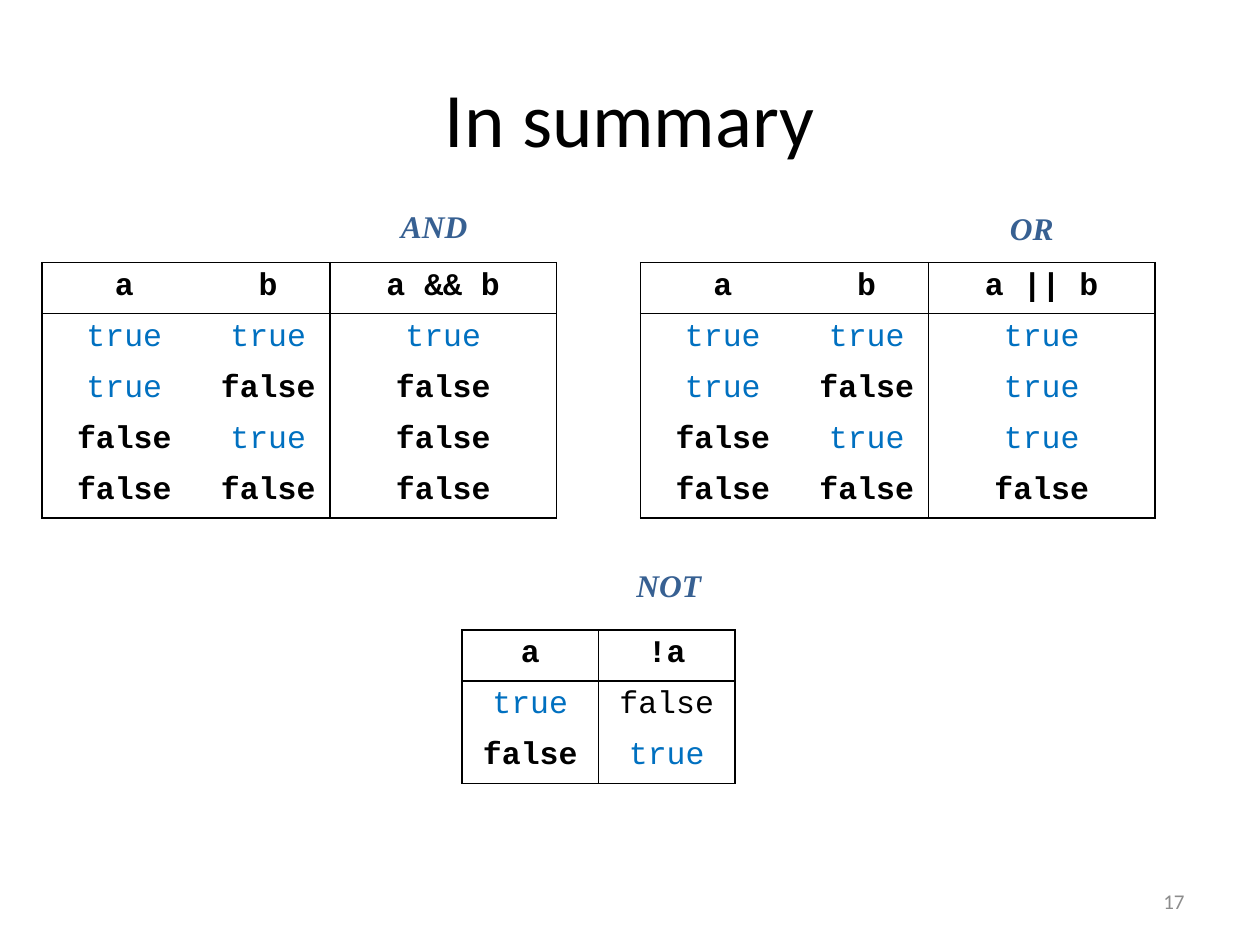
from lxml import etree
from pptx import Presentation
from pptx.dml.color import RGBColor
from pptx.enum import text
from pptx.oxml import ns
from pptx.util import Pt

BLACK = RGBColor(0x00, 0x00, 0x00)
GREY = RGBColor(0x8C, 0x8C, 0x8C)
TRUE_BLUE = RGBColor(0x00, 0x70, 0xC0)
CAPTION_BLUE = RGBColor(0x37, 0x60, 0x92)
ROW_HEIGHT = 29.2
LEFT, CENTER, RIGHT = text.PP_ALIGN.LEFT, text.PP_ALIGN.CENTER, text.PP_ALIGN.RIGHT
TOP, MIDDLE = text.MSO_ANCHOR.TOP, text.MSO_ANCHOR.MIDDLE

deck = Presentation()
deck.slide_width, deck.slide_height = Pt(720), Pt(540)
slide = deck.slides.add_slide(deck.slide_layouts[6])


def add_label(words, box, font_name, size, color, align, anchor, emphasis=False):
    frame = slide.shapes.add_textbox(*map(Pt, box)).text_frame
    frame.word_wrap = True
    frame.vertical_anchor = anchor
    frame.text = words
    line = frame.paragraphs[0]
    line.alignment = align
    font = line.runs[0].font
    font.name, font.size, font.color.rgb = font_name, Pt(size), color
    font.bold = font.italic = emphasis


def set_borders(cell, drawn):
    """Draw 1 pt black lines on the sides in drawn and clear the others."""
    properties = cell._tc.get_or_add_tcPr()
    for position, side in enumerate("LRTB"):
        line = etree.Element(ns.qn(f"a:ln{side}"), w=str(Pt(1)))
        if side in drawn:
            fill = etree.SubElement(line, ns.qn("a:solidFill"))
            etree.SubElement(fill, ns.qn("a:srgbClr"), val=str(BLACK))
        else:
            etree.SubElement(line, ns.qn("a:noFill"))
        properties.insert(position, line)


# Title and slide number
add_label("In summary", (36, 21.6, 648, 90), "Calibri", 44, BLACK, CENTER, MIDDLE)
add_label("17", (516, 500.5, 168, 28.75), "Calibri", 12, GREY, RIGHT, MIDDLE)

# Truth tables: caption, caption position, table position, column widths, rows
T, F = "true", "false"
inputs = [(T, T), (T, F), (F, T), (F, F)]
and_rows = [(a, b, T if a == b == T else F) for a, b in inputs]
or_rows = [(a, b, T if T in (a, b) else F) for a, b in inputs]
pair_widths = (94, 70.5, 129.5)
truth_tables = [
    ("AND", (222, 114.5), (24, 150), pair_widths, [("a", "b", "a && b")] + and_rows),
    ("OR", (570, 116), (366, 150), pair_widths, [("a", "b", "a || b")] + or_rows),
    ("NOT", (356.5, 320), (264, 360), (78, 78), [("a", "!a"), (T, F), (F, T)]),
]

for caption, caption_at, table_at, widths, rows in truth_tables:
    size = (sum(widths), ROW_HEIGHT * len(rows))
    grid = slide.shapes.add_table(len(rows), len(widths), *map(Pt, table_at + size)).table
    grid.first_row = grid.horz_banding = False
    for column, width in zip(grid.columns, widths):
        column.width = Pt(width)

    last_row, last_col = len(rows) - 1, len(widths) - 1
    for r, values in enumerate(rows):
        grid.rows[r].height = Pt(ROW_HEIGHT)
        for c, value in enumerate(values):
            cell = grid.cell(r, c)
            cell.fill.background()
            cell.text = value
            line = cell.text_frame.paragraphs[0]
            line.alignment = CENTER
            font = line.runs[0].font
            font.name, font.size = "Courier New", Pt(18)
            font.color.rgb = TRUE_BLUE if value == T else BLACK
            # The result of NOT true is the only plain "false"
            font.bold = value != T and not (caption == "NOT" and (r, c) == (1, 1))

            # Frame, header rule and a divider before the result column
            sides = {
                "L": c in (0, last_col),
                "R": c >= last_col - 1,
                "T": r <= 1,
                "B": r in (0, last_row),
            }
            set_borders(cell, [side for side, shown in sides.items() if shown])

    add_label(caption, caption_at + (60, 29), "Times New Roman", 18,
              CAPTION_BLUE, LEFT, TOP, emphasis=True)

deck.save("out.pptx")
